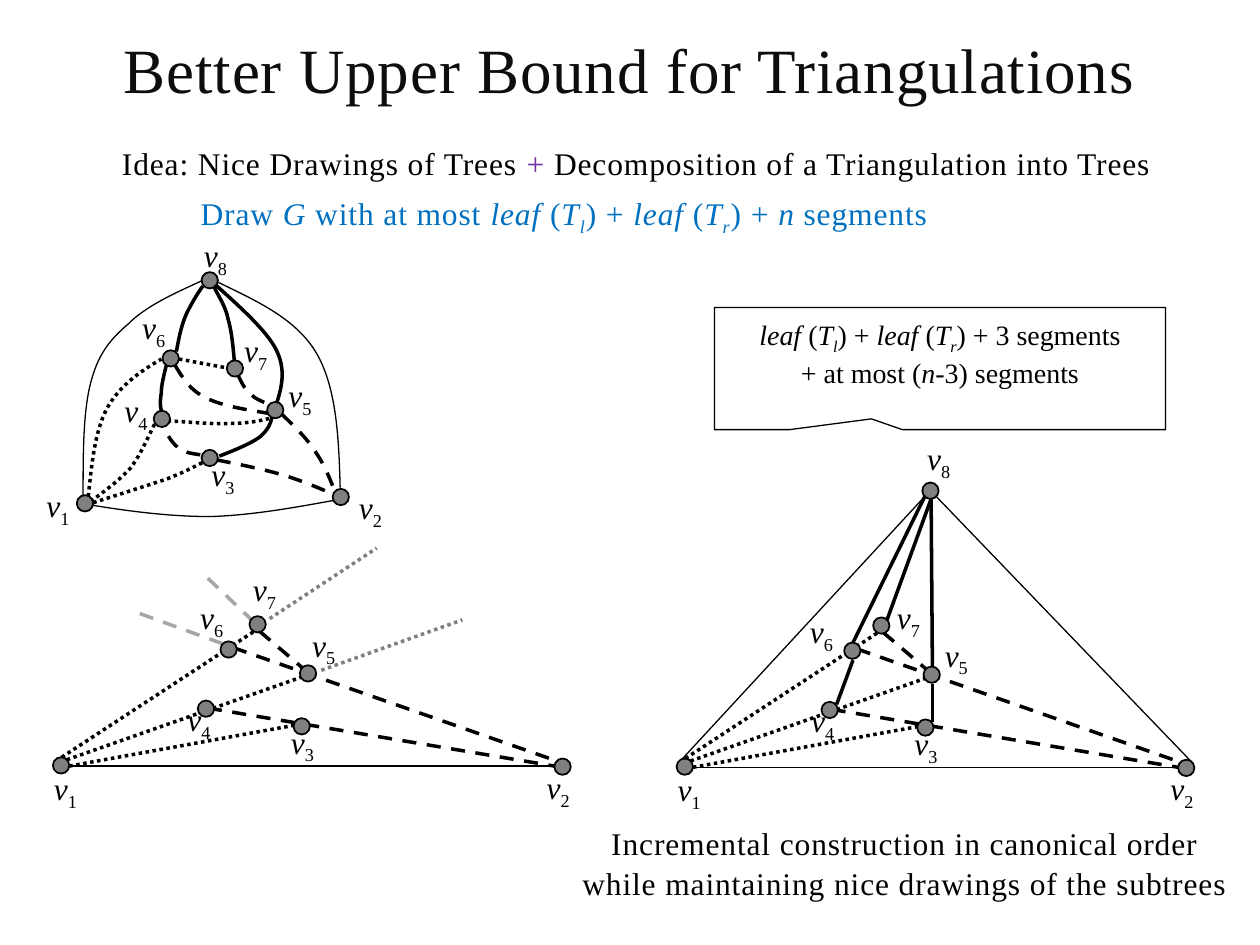
from lxml import etree
from pptx import Presentation
from pptx.dml.color import RGBColor
from pptx.enum.dml import MSO_LINE
from pptx.enum.shapes import MSO_CONNECTOR, MSO_SHAPE
from pptx.enum.text import MSO_ANCHOR, PP_ALIGN
from pptx.oxml.ns import qn
from pptx.util import Pt

PX = 9144  # 100 px to the inch
FONT = "Times New Roman"
BLACK, GRAY, LIGHT, BLUE, PURPLE = "000000", "808080", "A6A6A6", "0070C0", "7030A0"
DOT, DASH = MSO_LINE.ROUND_DOT, MSO_LINE.DASH
TOP, MIDDLE = MSO_ANCHOR.TOP, MSO_ANCHOR.MIDDLE
NODE = 13
THIN, THICK = 0.75, 2

# A run is text, or (text, style): i = italic, s = subscript, p = purple.
LEAF_SUM = [("leaf ", "i"), "(", ("T", "i"), ("l", "is"), ") + ",
            ("leaf ", "i"), "(", ("T", "i"), ("r", "is")]

GRAPH_NODES = {1: (61, 393), 2: (264, 388), 3: (160, 357), 4: (122, 326),
               5: (212, 319), 6: (129, 278), 7: (180, 286), 8: (160, 216)}
GRAPH_LABELS = {1: (21, 390), 2: (269, 392), 3: (152, 366), 4: (83, 315),
                5: (213, 303), 6: (97, 249), 7: (178, 267), 8: (146, 192)}
# Start point, then three points for each cubic segment (one for a straight edge).
OUTER_EDGES = [
    [(66, 393), (66, 360), (66, 327), (72, 304), (78, 281), (87, 270), (102, 257),
     (116, 243), (138, 233), (160, 223)],
    [(173, 224), (204, 239), (235, 253), (251, 280), (267, 307), (269, 347), (270, 387)],
    [(73, 401), (104, 406), (135, 410), (167, 410), (200, 409), (233, 403), (266, 397)],
]
SOLID_EDGES = [
    [(140, 279), (142, 268), (144, 258), (148, 249), (152, 241), (156, 234), (161, 227)],
    [(186, 286), (185, 275), (184, 263), (181, 253), (179, 243), (174, 236), (170, 228)],
    [(220, 319), (224, 306), (227, 293), (219, 277), (211, 262), (191, 244), (171, 226)],
    [(174, 362), (187, 357), (199, 352), (206, 347), (213, 341), (215, 336), (216, 330)],
    [(128, 326), (127, 322), (127, 318), (128, 312), (128, 306), (130, 298), (132, 290)],
]
DOTTED_EDGES = [
    [(70, 394), (73, 368), (75, 343), (85, 324), (95, 306), (111, 295), (128, 285)],
    [(142, 285), (180, 292)],
    [(74, 399), (96, 392), (118, 385), (133, 380), (148, 374), (155, 370), (163, 366)],
    [(133, 334), (152, 335), (171, 337), (184, 336), (197, 336), (206, 334), (214, 332)],
    [(72, 398), (84, 389), (95, 381), (104, 371), (112, 360), (117, 348), (123, 336)],
]
DASHED_EDGES = [
    [(189, 298), (192, 304), (194, 309), (199, 313), (203, 317), (209, 319), (216, 322)],
    [(139, 290), (145, 300), (151, 310), (164, 316), (176, 322), (194, 325), (213, 328)],
    [(224, 329), (233, 338), (243, 347), (250, 358), (257, 368), (262, 380), (266, 391)],
    [(172, 365), (192, 369), (212, 373), (228, 378), (243, 383), (255, 388), (266, 393)],
    [(159, 361), (152, 360), (145, 359), (141, 355), (136, 351), (133, 345), (129, 338)],
]

# The straight-line drawing, shown at the left and again shifted to the right.
TREE_NODES = {1: (42, 601), 2: (440, 602), 3: (233, 570), 4: (157, 556),
              5: (238, 528), 6: (175, 509), 7: (198, 489)}
TREE_LABELS = {1: (27, 615), 2: (418, 614), 3: (215, 578), 4: (133, 560)}
TREE_LINES = [
    (55, 608, 440, 608, THIN, None),
    (55, 608, 237, 575, THICK, DOT), (53, 603, 249, 534, THICK, DOT),
    (49, 601, 211, 495, THICK, DOT),
    (165, 562, 440, 608, THICK, DASH), (185, 514, 442, 604, THICK, DASH),
    (206, 501, 240, 530, THICK, DASH),
]
EXTENSIONS = [(111, 487, 177, 511, THICK, DASH, LIGHT), (165, 459, 204, 496, THICK, DASH, LIGHT),
              (255, 532, 367, 492, THICK, DOT, GRAY), (214, 491, 299, 435, THICK, DOT, GRAY)]
APEX_LINES = [(539, 605, 734, 394, THIN), (743, 394, 946, 605, THIN),
              (677, 510, 734, 394), (704, 492, 739, 396), (740, 529, 739, 396),
              (740, 573, 740, 543), (664, 559, 677, 524)]


def rgb(value):
    return RGBColor.from_string(value)


def write(sp, paragraphs, size=18, color=BLACK, spacing=0, line=None, anchor=TOP,
          wrap=True, margins=(10, 5)):
    tf = sp.text_frame
    tf.word_wrap = wrap
    tf.vertical_anchor = anchor
    tf.margin_left = tf.margin_right = margins[0] * PX
    tf.margin_top = tf.margin_bottom = margins[1] * PX
    for i, runs in enumerate(paragraphs):
        p = tf.add_paragraph() if i else tf.paragraphs[0]
        p.alignment = PP_ALIGN.CENTER
        if line:
            p.line_spacing = line
        for run in runs:
            text, style = (run, "") if isinstance(run, str) else run
            r = p.add_run()
            r.text = text
            r.font.name, r.font.size = FONT, Pt(size)
            r.font.italic = "i" in style
            r.font.color.rgb = rgb(PURPLE if "p" in style else color)
            props = r.font._element
            if spacing:
                props.set("spc", str(spacing))
            if "s" in style:
                props.set("baseline", "-25000")


def add_text(s, box, paragraphs, **fmt):
    sp = s.shapes.add_textbox(*(v * PX for v in box))
    write(sp, paragraphs, **fmt)


def outline(sp, width, dash=None, color=BLACK):
    sp.line.color.rgb = rgb(color)
    sp.line.width = Pt(width)
    if dash:
        sp.line.dash_style = dash


def add_line(s, x1, y1, x2, y2, width=THICK, dash=None, color=BLACK):
    sp = s.shapes.add_connector(MSO_CONNECTOR.STRAIGHT, *(v * PX for v in (x1, y1, x2, y2)))
    outline(sp, width, dash, color)
    etree.SubElement(sp._element.spPr, qn("a:effectLst"))


def add_curve(s, points, width=THICK, dash=None):
    """Draw an open outline; points after the first form cubic segments in threes."""
    builder = s.shapes.build_freeform(*points[0], scale=PX)
    builder.add_line_segments(points[1:], close=False)
    sp = builder.convert_to_shape()
    if len(points) > 2:
        steps = list(sp._element.iter(qn("a:lnTo")))
        for i in range(0, len(steps), 3):
            cubic = etree.SubElement(steps[i].getparent(), qn("a:cubicBezTo"))
            for step in steps[i:i + 3]:
                cubic.append(step[0])
                step.getparent().remove(step)
    sp.fill.background()
    sp.shadow.inherit = False
    outline(sp, width, dash)


def add_vertices(s, nodes, labels, dx=0, dy=0):
    for x, y in nodes.values():
        sp = s.shapes.add_shape(MSO_SHAPE.OVAL, (x + dx) * PX, (y + dy) * PX, NODE * PX, NODE * PX)
        sp.fill.solid()
        sp.fill.fore_color.rgb = rgb(GRAY)
        sp.shadow.inherit = False
        outline(sp, 1)
    for number, (x, y) in labels.items():
        add_text(s, (x + dx, y + dy, 50, 25), [[("v", "i"), (str(number), "s")]],
                 anchor=MIDDLE, wrap=False, margins=(0, 0))


def add_graph(s):
    for edges, width, dash in ((OUTER_EDGES, THIN, None), (SOLID_EDGES, THICK, None),
                               (DOTTED_EDGES, THICK, DOT), (DASHED_EDGES, THICK, DASH)):
        for points in edges:
            add_curve(s, points, width, dash)
    add_vertices(s, GRAPH_NODES, GRAPH_LABELS)


def add_tree_drawing(s, extra_lines, labels, dx=0, dy=0):
    for x1, y1, x2, y2, *style in TREE_LINES:
        add_line(s, x1 + dx, y1 + dy, x2 + dx, y2 + dy, *style)
    for line in extra_lines:
        add_line(s, *line)
    add_vertices(s, TREE_NODES, {**TREE_LABELS, **labels}, dx, dy)


def add_callout(s):
    sp = s.shapes.add_shape(MSO_SHAPE.RECTANGULAR_CALLOUT, *(v * PX for v in (567, 244, 358, 97)))
    sp.adjustments[0], sp.adjustments[1] = -0.152, 0.412
    sp.fill.background()
    sp.shadow.inherit = False
    outline(sp, THIN)
    write(sp, [LEAF_SUM + [") + 3 segments"], ["+ at most (", ("n", "i"), "-3) segments"]],
          size=16, margins=(10, 8))


def main():
    prs = Presentation()
    prs.slide_width, prs.slide_height = 1000 * PX, 750 * PX
    s = prs.slides.add_slide(prs.slide_layouts[5])

    title = s.shapes.title
    title.left, title.top, title.width, title.height = (v * PX for v in (0, 15, 1000, 104))
    body = {"spacing": 50, "line": 1.07}
    write(title, [["Better Upper Bound for Triangulations"]], size=36, color="0D0D0D", **body)
    add_text(s, (66, 107, 878, 40),
             [["Idea: Nice Drawings of Trees ", ("+ ", "p"),
               "Decomposition of a Triangulation into Trees"]], **body)
    add_text(s, (135, 147, 625, 40),
             [["Draw ", ("G", "i"), " with at most ", *LEAF_SUM, ") + ", ("n", "i"), " segments"]],
             color=BLUE, wrap=False, **body)

    add_graph(s)
    add_tree_drawing(s, EXTENSIONS, {5: (232, 501), 6: (143, 479), 7: (185, 457)})
    add_tree_drawing(s, APEX_LINES, {5: (239, 508), 6: (132, 489), 7: (201, 478)}, dx=495, dy=1)
    add_vertices(s, {8: (732, 383)}, {8: (720, 353)})
    add_callout(s)
    add_text(s, (450, 647, 536, 71),
             [["Incremental construction in canonical order"],
              ["while maintaining nice drawings of the subtrees"]], wrap=False, **body)
    prs.save("out.pptx")


if __name__ == "__main__":
    main()
